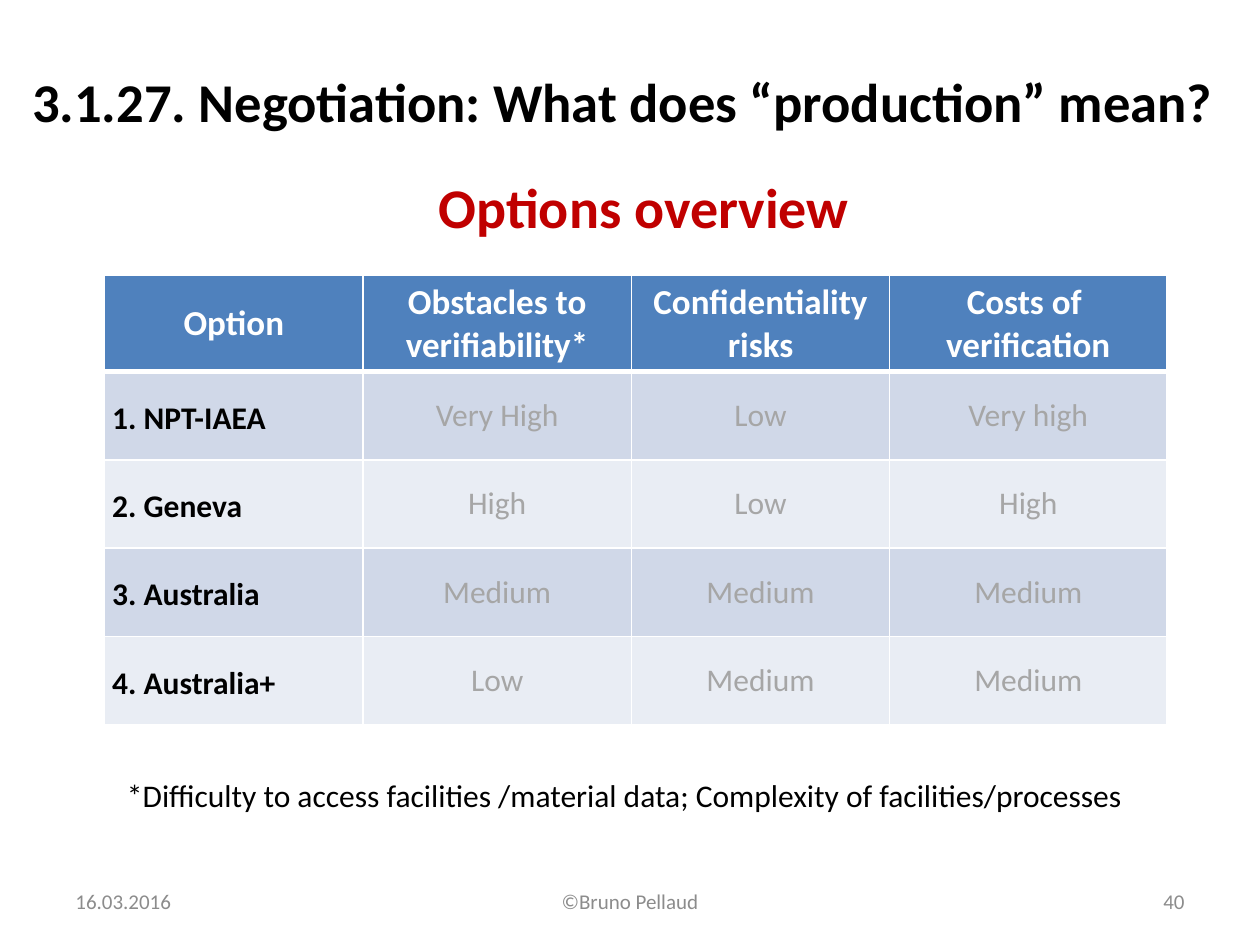
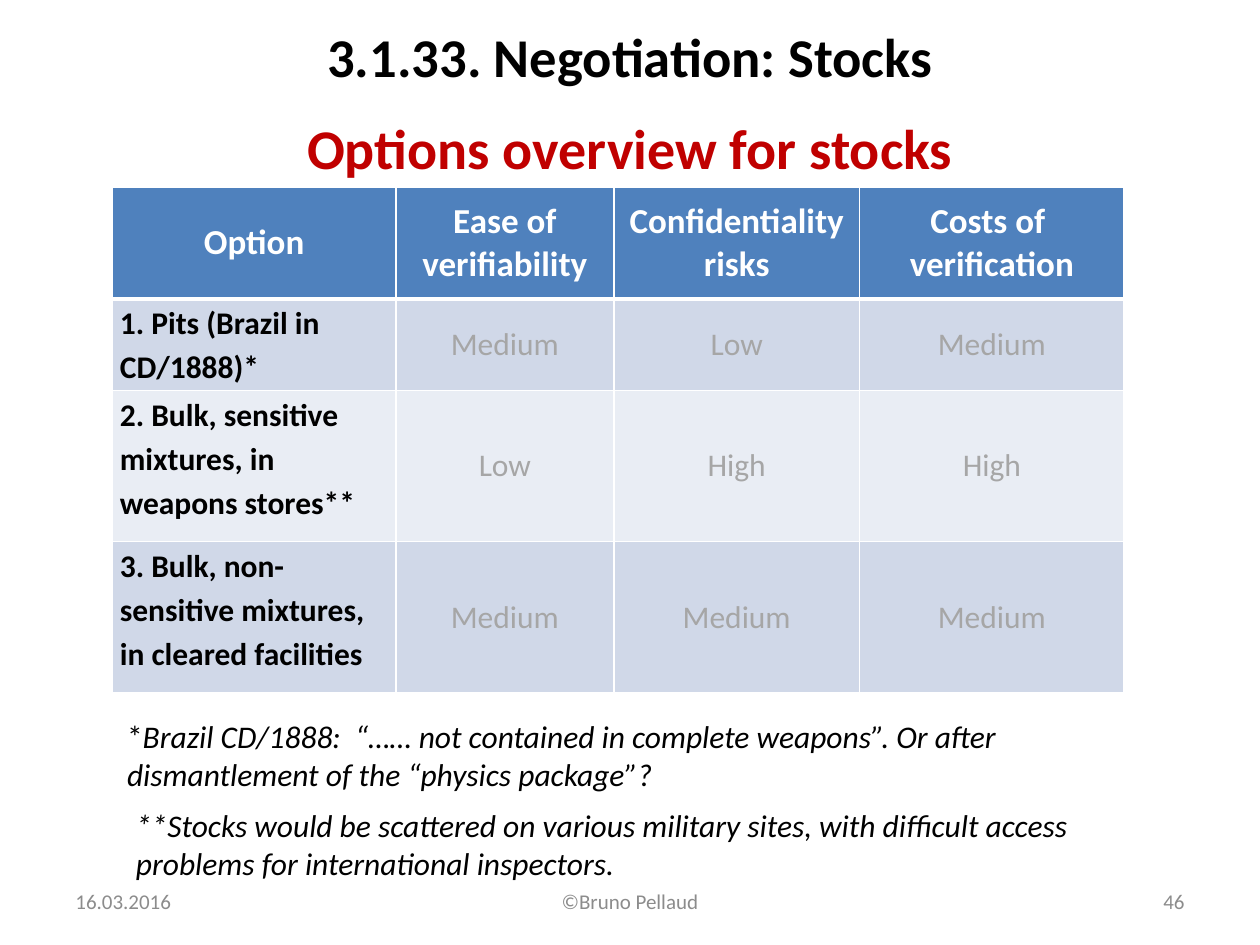
from dataclasses import dataclass
from lxml.etree import SubElement
from pptx import Presentation
from pptx.dml.color import RGBColor
from pptx.enum.text import MSO_ANCHOR, PP_ALIGN
from pptx.oxml.ns import qn
from pptx.util import Pt


@dataclass(frozen=True)
class Theme:
    font: str = "Calibri"
    black: str = "000000"
    white: str = "FFFFFF"
    red: str = "C00000"
    grey: str = "A6A6A6"
    dim: str = "8C8C8C"
    head: str = "4F81BD"
    bands: tuple = ("D0D8E8", "E9EDF4")
    title: float = 31.2
    sub: float = 32
    label: float = 20
    body: float = 18
    foot: float = 12


look = Theme()
LEFT, MID, RIGHT = PP_ALIGN.LEFT, PP_ALIGN.CENTER, PP_ALIGN.RIGHT
TOP, CENTRE = MSO_ANCHOR.TOP, MSO_ANCHOR.MIDDLE


def style(frame, size, color, bold=False, align=LEFT, anchor=TOP):
    frame.word_wrap = True
    frame.vertical_anchor = anchor
    for para in frame.paragraphs:
        para.alignment = align
        for run in para.runs:
            run.font.name = look.font
            run.font.size = Pt(size)
            run.font.bold = bold
            run.font.color.rgb = RGBColor.from_string(color)


def write(slide, box, plain, slant, *form):
    """Add a text box holding upright text followed by italic text."""
    frame = slide.shapes.add_textbox(*map(Pt, box)).text_frame
    for text, italic in ((plain, False), (slant, True)):
        if text:
            run = frame.paragraphs[0].add_run()
            run.text = text
            run.font.italic = italic
    style(frame, *form)


# In table text, \n starts a paragraph and \v breaks a line.
pages = [
    dict(
        number="40",
        title="3.1.27. Negotiation: What does “production” mean?",
        place=(0, 26, 711.4, 62.6), anchor=CENTRE,
        sub="Options overview", under=(43.9, 95, 648, 61.2),
        corner=(59.8, 157), cols=(147.6, 153.4, 147.6, 158.4),
        rows=(55.4, 50.4, 50.4, 50.4, 50.4), side=CENTRE,
        cells=[
            ("Option", "Obstacles to verifiability*",
             "Confidentiality\nrisks", "Costs of \nverification"),
            ("1. NPT-IAEA", "Very High", "Low", "Very high"),
            ("2. Geneva", "High", "Low", "High"),
            ("3. Australia", "Medium", "Medium", "Medium"),
            ("4. Australia+", "Low", "Medium", "Medium"),
        ],
        notes=[
            ((65.5, 439.9, 593.3, 29),
             "*Difficulty to access facilities /material data; "
             "Complexity of facilities/processes", ""),
        ],
    ),
    dict(
        number="46",
        title="3.1.33. Negotiation: Stocks",
        place=(36, 9.4, 648, 90), anchor=TOP,
        sub="Options overview for stocks", under=(36, 61.2, 648, 39),
        corner=(64.2, 106.8), cols=(162, 124.6, 140.4, 151.2),
        rows=(64, 52.4, 86.4, 86.4), side=TOP,
        cells=[
            ("Option", "Ease of verifiability",
             "Confidentiality\nrisks", "Costs of \nverification"),
            ("1. Pits (Brazil in\vCD/1888)*", "Medium", "Low", "Medium"),
            ("2. Bulk, sensitive \vmixtures, in weapons stores**",
             "Low", "High", "High"),
            ("3. Bulk, non-sensitive mixtures, in cleared facilities",
             "Medium", "Medium", "Medium"),
        ],
        notes=[
            ((65.5, 406.1, 601.2, 51), "*",
             "Brazil CD/1888:  “…… not contained in complete weapons”. "
             "Or after dismantlement of the “physics package”?"),
            ((70.6, 457.2, 572.4, 51), "",
             "**Stocks would be scattered on various military sites, with "
             "difficult access problems for international inspectors."),
        ],
    ),
]

deck = Presentation()
deck.slide_width, deck.slide_height = Pt(720), Pt(540)

for page in pages:
    slide = deck.slides.add_slide(deck.slide_layouts[6])
    write(slide, page["place"], page["title"], "",
          look.title, look.black, True, MID, page["anchor"])
    write(slide, page["under"], page["sub"], "", look.sub, look.red, True, MID)

    cols, rows = page["cols"], page["rows"]
    spot = (*page["corner"], sum(cols), sum(rows))
    grid = slide.shapes.add_table(len(rows), len(cols), *map(Pt, spot)).table
    for col, width in zip(grid.columns, cols):
        col.width = Pt(width)
    for row, height in zip(grid.rows, rows):
        row.height = Pt(height)

    for r, line in enumerate(page["cells"]):
        for c, text in enumerate(line):
            cell = grid.cell(r, c)
            frame = cell.text_frame
            frame.text = text
            if r == 0:
                style(frame, look.label, look.white, True, MID)
            elif c == 0:
                style(frame, look.body, look.black, True)
                frame.paragraphs[0].line_spacing = 1.15
                frame.paragraphs[0].space_after = Pt(10)
                cell.margin_left = cell.margin_right = Pt(4.3)
                cell.margin_top = cell.margin_bottom = 0
            else:
                style(frame, look.body, look.grey, False, MID)
            cell.vertical_anchor = page["side"] if r and c == 0 else CENTRE

            props = cell._tc.get_or_add_tcPr()
            for edge in "LRTB":
                thick = (r, edge) in ((0, "B"), (1, "T"))
                rule = SubElement(props, qn(f"a:ln{edge}"), w=str(Pt(3 if thick else 1)))
                paint = SubElement(rule, qn("a:solidFill"))
                SubElement(paint, qn("a:srgbClr"), val=look.white)
            cell.fill.solid()
            tint = look.bands[(r - 1) % 2] if r else look.head
            cell.fill.fore_color.rgb = RGBColor.from_string(tint)

    for box, plain, slant in page["notes"]:
        write(slide, box, plain, slant, look.body, look.black)

    for left, width, text, align in (
        (36, 168, "16.03.2016", LEFT),
        (246, 228, "©Bruno Pellaud", MID),
        (516, 168, page["number"], RIGHT),
    ):
        write(slide, (left, 500.5, width, 28.8), text, "",
              look.foot, look.dim, False, align, CENTRE)

deck.save("out.pptx")
